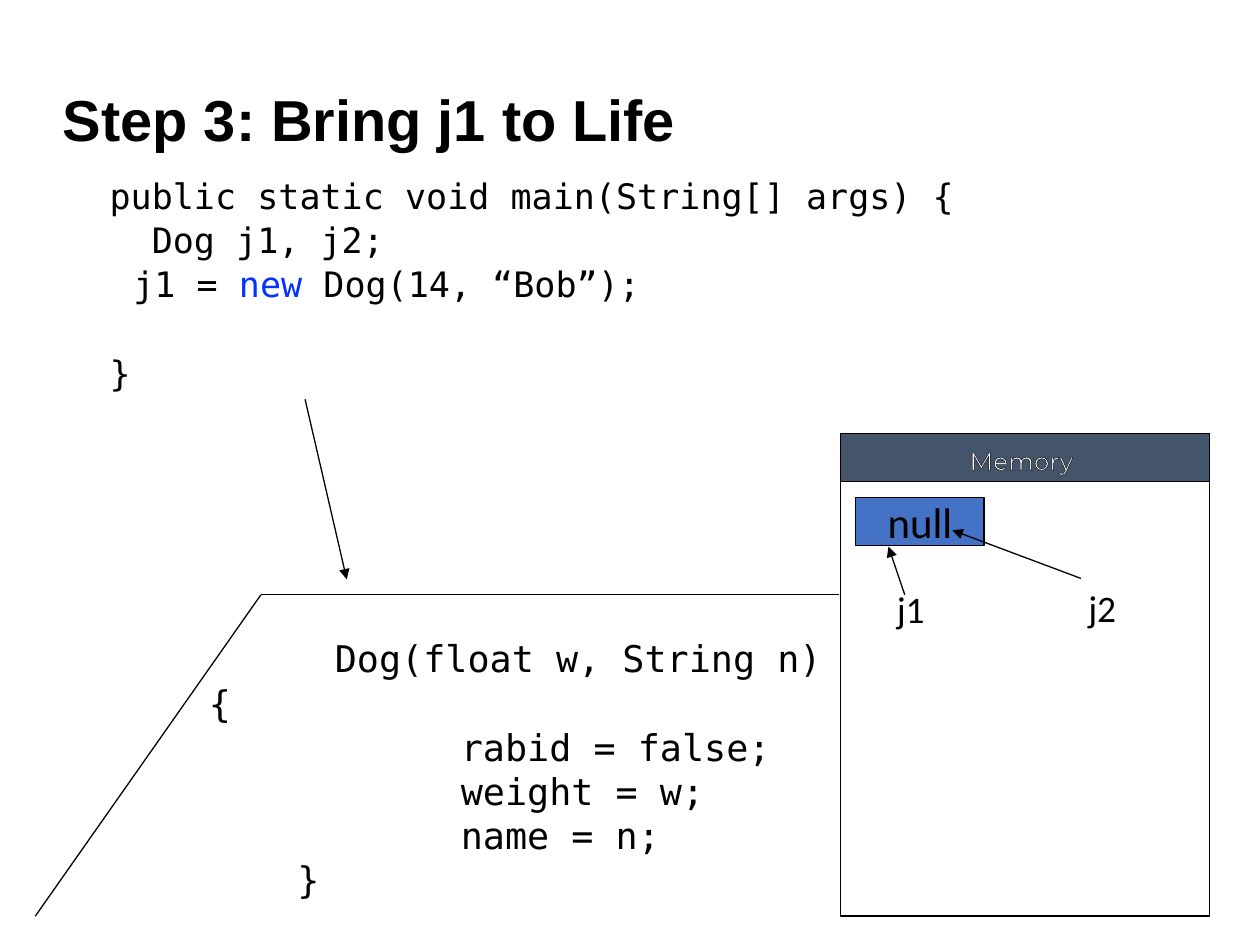
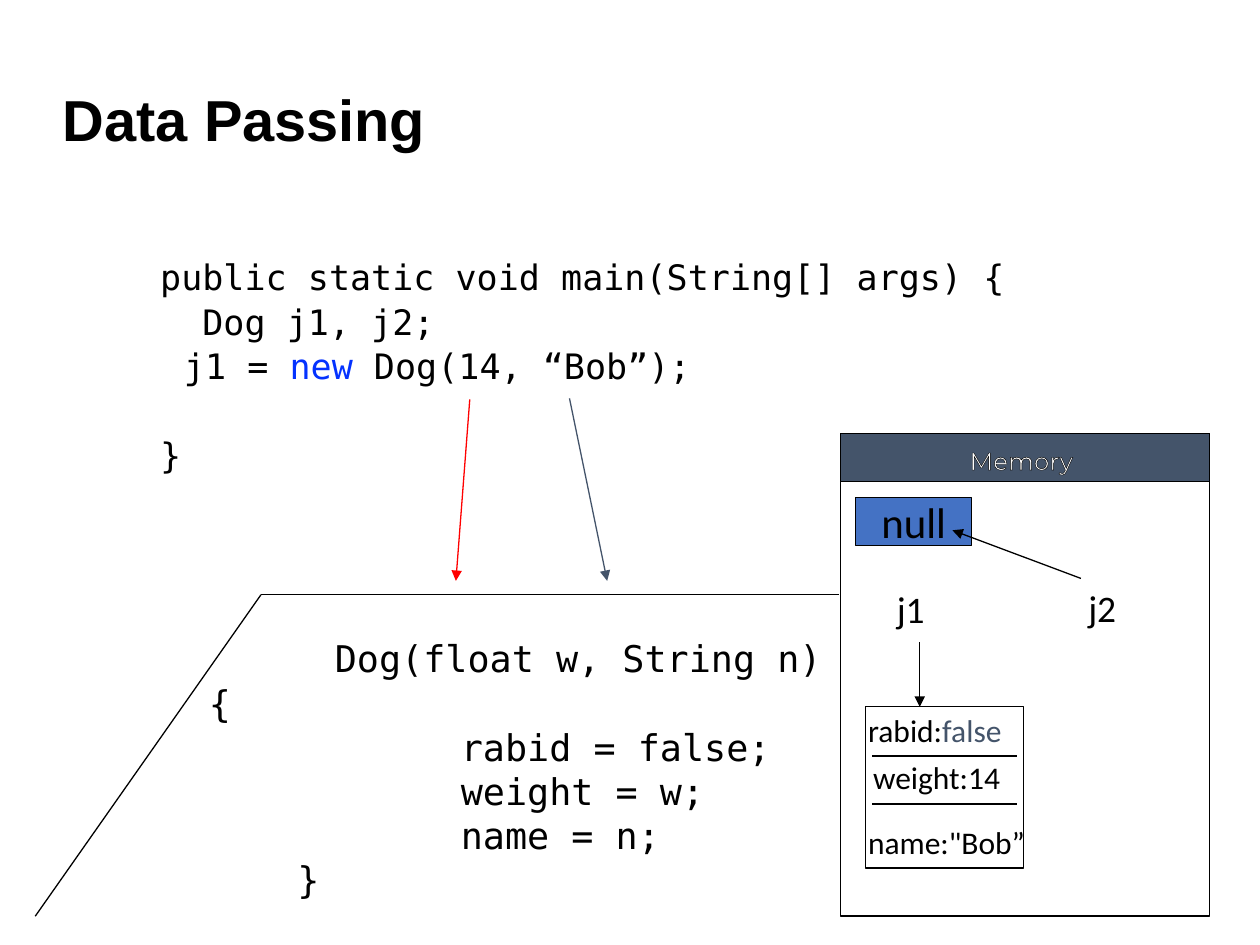
from lxml.etree import SubElement
from pptx import Presentation
from pptx.dml.color import RGBColor
from pptx.enum.shapes import MSO_CONNECTOR, MSO_SHAPE
from pptx.enum.text import MSO_ANCHOR, PP_ALIGN
from pptx.oxml.ns import qn
from pptx.util import Cm, Pt

INK = {
    "black": "000000",
    "white": "FFFFFF",
    "slate": "44546A",
    "blue": "4472C4",
    "key": "0432FF",
    "red": "FF0000",
}
MONO = "DejaVu Sans Mono"
SANS = "Calibri"
THIN = Pt(0.75)
MAIN = [
    "public static void main(String[] args) {",
    "  Dog j1, j2;",
    "\tj1 = new Dog(14, “Bob”);",
    "}",
]
BUILD = [
    "\tDog(float w, String n) {",
    "\t\trabid = false;",
    "\t\tweight = w;",
    "\t\tname = n;",
    "    }",
]


def color(name):
    return RGBColor.from_string(INK[name])


def tint(para, word, ink):
    run = para.runs[0]
    head, tail = run.text.split(word)
    run.text = head
    key = para.add_run()
    key.text = word
    key.font.color.rgb = color(ink)
    if tail:
        para.add_run().text = tail


def write(frame, text, size, font, ink="black", mark=None):
    frame.word_wrap = True
    frame.text = text
    for para in frame.paragraphs:
        if mark and mark[0] in para.text:
            tint(para, *mark)
        for run in para.runs:
            run.font.size = Pt(size)
            run.font.name = font
            if run.font.color.type is None:
                run.font.color.rgb = color(ink)


def label(slide, place, text, size, font=SANS, ink="black", mark=None):
    frame = slide.shapes.add_textbox(*map(Cm, place)).text_frame
    write(frame, text, size, font, ink, mark)
    return frame


def rect(slide, place, fill=None):
    shape = slide.shapes.add_shape(MSO_SHAPE.RECTANGLE, *map(Cm, place))
    shape.shadow.inherit = False
    if fill:
        shape.fill.solid()
        shape.fill.fore_color.rgb = color(fill)
    else:
        shape.fill.background()
    shape.line.color.rgb = color("black")
    shape.line.width = THIN
    return shape


def line(slide, start, end, ink="black", tip=True):
    wire = slide.shapes.add_connector(
        MSO_CONNECTOR.STRAIGHT, *map(Cm, start + end))
    wire.line.color.rgb = color(ink)
    wire.line.width = THIN
    if tip:
        SubElement(wire.line._get_or_add_ln(), qn("a:tailEnd"), type="triangle")
    SubElement(wire._element.spPr, qn("a:effectLst"))


def title(slide, text):
    frame = label(slide, (1.02, 1.42, 23.39, 2.13), text, 33, "Arial")
    frame.vertical_anchor = MSO_ANCHOR.MIDDLE
    para = frame.paragraphs[0]
    para.line_spacing = 0.9
    para.runs[0].font.bold = True


def caller(slide, place, pad):
    frame = label(slide, place, "\n".join(MAIN), 20, MONO, mark=("new", "key"))
    frame.margin_left = frame.margin_right = Cm(pad)
    for para, gap in zip(frame.paragraphs, (0, 3.8, 3.8, 29.1)):
        para.line_spacing = 0.9
        para.space_before = Pt(gap)
        props = para._p.get_or_add_pPr()
        props.set("marL", str(Cm(1.42)))
        props.set("indent", str(Cm(-0.48)))


def maker(slide):
    frame = label(slide, (3.96, 12.7, 13.13, 5.59), "\n".join(BUILD), 21, MONO)
    for para in frame.paragraphs:
        tabs = SubElement(para._p.get_or_add_pPr(), qn("a:tabLst"))
        for stop in (1, 2):
            SubElement(tabs, qn("a:tab"), pos=str(Cm(2.54 * stop)), algn="l")
    line(slide, (0.71, 18.47), (5.26, 11.99), tip=False)
    line(slide, (5.26, 11.99), (16.92, 11.99), tip=False)


def memory(slide, wide):
    rect(slide, (16.94, 8.74, 7.44, 9.73))
    rect(slide, (16.94, 8.74, 7.44, 0.97), "slate")
    frame = label(slide, (17.58, 8.86, 6.02, 0.86), "Memory", 14,
                  "Montserrat", "white")
    para = frame.paragraphs[0]
    para.alignment = PP_ALIGN.CENTER
    props = para.runs[0]._r.get_or_add_rPr()
    edge = SubElement(props, qn("a:ln"), w=str(THIN))
    fill = SubElement(edge, qn("a:solidFill"))
    SubElement(fill, qn("a:srgbClr"), val=INK["black"])
    props.insert(0, edge)

    cell = rect(slide, (17.25, 10.03, wide, 0.97), "blue").text_frame
    write(cell, "null", 24.5, SANS)
    cell.vertical_anchor = MSO_ANCHOR.MIDDLE
    cell.paragraphs[0].alignment = PP_ALIGN.CENTER
    label(slide, (17.83, 11.68, 1.12, 1.17), "j1", 21.4)
    label(slide, (21.69, 11.66, 1.12, 1.17), "j2", 21.4)
    line(slide, (21.79, 11.66), (19.2, 10.69))


def record(slide):
    rect(slide, (17.45, 14.25, 3.18, 3.25))
    label(slide, (17.25, 14.2, 3.48, 1.02), "rabid:false", 18,
          mark=("false", "slate"))
    label(slide, (17.35, 15.16, 3.25, 1.02), "weight:14", 18)
    label(slide, (17.25, 16.46, 3.89, 1.02), 'name:"Bob”', 18)
    for top in (15.24, 16.21):
        line(slide, (17.58, top), (20.5, top), tip=False)


def page(deck, text, place, pad, wide):
    slide = deck.slides.add_slide(deck.slide_layouts[6])
    maker(slide)
    title(slide, text)
    caller(slide, place, pad)
    memory(slide, wide)
    return slide


def main():
    deck = Presentation()
    deck.slide_width = Cm(25.4)
    deck.slide_height = Cm(19.05)

    life = page(deck, "Step 3: Bring j1 to Life",
                (1.02, 3.48, 23.39, 13.92), 0.25, 2.59)
    line(life, (6.15, 8.05), (6.99, 11.68))
    line(life, (18.24, 11.99), (17.91, 11.02))

    data = page(deck, "Data Passing", (2.29, 5.13, 20.96, 11.18), 0, 2.34)
    line(data, (9.47, 8.05), (9.19, 11.71), "red")
    line(data, (11.48, 8.03), (12.24, 11.71), "slate")
    line(data, (18.54, 12.95), (18.54, 14.25))
    record(data)

    deck.save("out.pptx")


if __name__ == "__main__":
    main()
